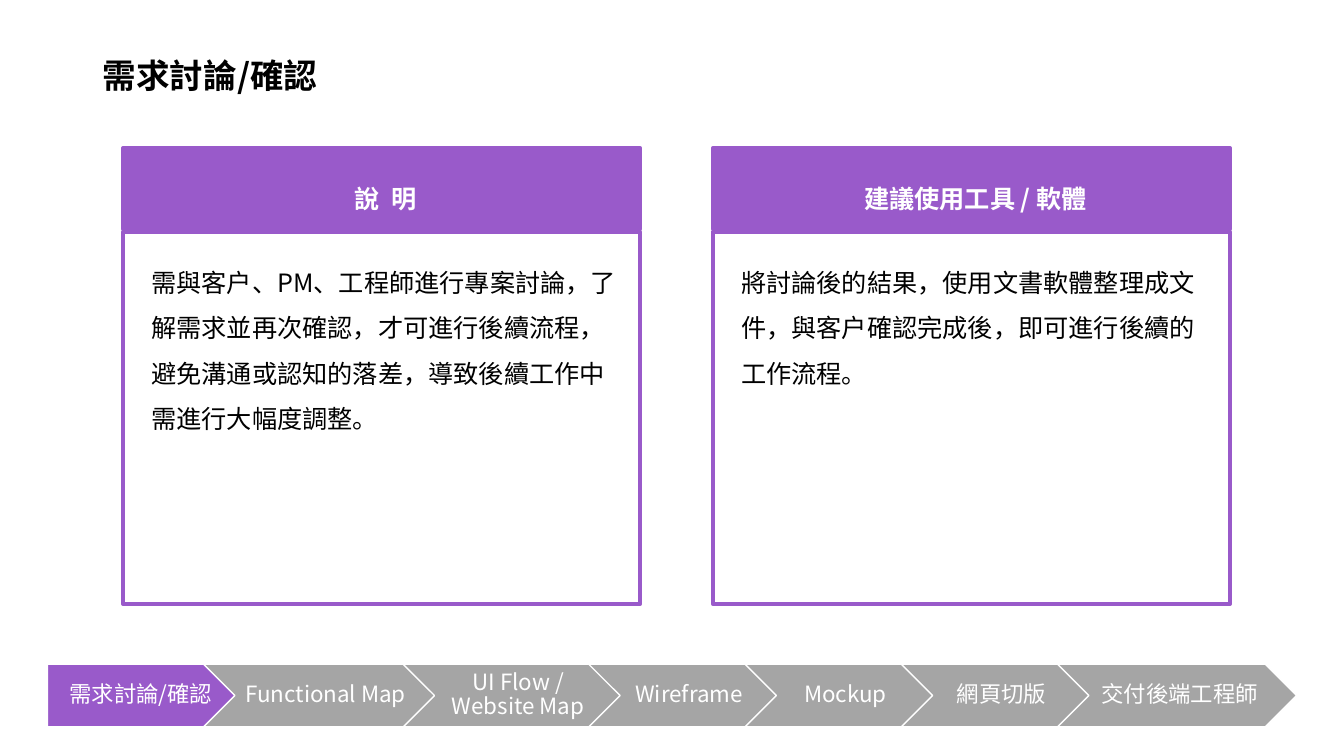
from lxml.etree import SubElement
from pptx import Presentation
from pptx.dml.color import RGBColor
from pptx.enum.shapes import MSO_SHAPE
from pptx.enum.text import MSO_ANCHOR, MSO_AUTO_SIZE, PP_ALIGN
from pptx.oxml.ns import qn
from pptx.util import Inches, Pt

TITLE = "需求討論/確認"
CARDS = [
    ("說  明",
     "需與客戶、PM、工程師進行專案討論，了解需求並再次確認，才可進行後續流程，"
     "避免溝通或認知的落差，導致後續工作中需進行大幅度調整。"),
    ("建議使用工具 / 軟體",
     "將討論後的結果，使用文書軟體整理成文件，與客戶確認完成後，"
     "即可進行後續的工作流程。"),
]
STEPS = [
    ("需求討論/確認", 1.94),
    ("Functional Map", 2.37),
    ("UI Flow / Website Map", 2.23),
    ("Wireframe", 1.94),
    ("Mockup", 1.94),
    ("網頁切版", 1.94),
    ("交付後端工程師", 2.37),
]

FONT = "Noto Sans CJK TC"
PURPLE = RGBColor(0x99, 0x5A, 0xCA)
GRAY = RGBColor(0xA5, 0xA5, 0xA5)
WHITE = RGBColor(0xFF, 0xFF, 0xFF)
BLACK = RGBColor(0, 0, 0)

CARD_LEFT, CARD_STEP, CARD_WIDTH = 1.22, 5.85, 5.13
CARD_PAD = (0.28, 0.2, 0.2, 0.2)
STEP_LEFT, STEP_TOP, STEP_HIGH, OVERLAP = 0.47, 6.59, 0.62, 0.39


def write(shape, text, size, color, bold=False, align=PP_ALIGN.LEFT,
          space=0.9, anchor=MSO_ANCHOR.MIDDLE, pad=(0.1, 0.05, 0.1, 0.05)):
    frame = shape.text_frame
    frame.word_wrap = True
    frame.vertical_anchor = anchor
    (frame.margin_left, frame.margin_top,
     frame.margin_right, frame.margin_bottom) = map(Inches, pad)
    para = frame.paragraphs[0]
    para.alignment = align
    para.line_spacing = space
    run = para.add_run()
    run.text = text
    font = run.font
    font.name, font.size, font.bold = FONT, Pt(size), bold
    font.color.rgb = color
    SubElement(run._r.get_or_add_rPr(), qn("a:ea"), typeface=FONT)


def draw(slide, kind, box, fill, line, width):
    shape = slide.shapes.add_shape(kind, *map(Inches, box))
    shape.shadow.inherit = False
    if fill is None:
        shape.fill.background()
    else:
        shape.fill.solid()
        shape.fill.fore_color.rgb = fill
    shape.line.color.rgb = line
    shape.line.width = Pt(width)
    return shape


def add_steps(slide):
    left = STEP_LEFT
    for i, (name, width) in enumerate(STEPS):
        first = i == 0
        kind = MSO_SHAPE.PENTAGON if first else MSO_SHAPE.CHEVRON
        shape = draw(slide, kind, (left, STEP_TOP, width, STEP_HIGH),
                     PURPLE if first else GRAY, WHITE, 1)
        write(shape, name, 16, WHITE, align=PP_ALIGN.CENTER,
              pad=(0.09 if first else 0.07, 0.05, 0.02, 0.05))
        left += width - OVERLAP


def add_cards(slide):
    for i, (head, body) in enumerate(CARDS):
        left = CARD_LEFT + i * CARD_STEP
        panel = draw(slide, MSO_SHAPE.RECTANGLE,
                     (left, 2.3, CARD_WIDTH, 3.69), None, PURPLE, 3)
        write(panel, body, 18, BLACK, space=1.5,
              anchor=MSO_ANCHOR.TOP, pad=CARD_PAD)
        band = draw(slide, MSO_SHAPE.RECTANGLE,
                    (left, 1.47, CARD_WIDTH, 0.8), PURPLE, PURPLE, 3)
        write(band, head, 18, WHITE, True, PP_ALIGN.CENTER, 1.5,
              MSO_ANCHOR.TOP, CARD_PAD)
        band.text_frame.auto_size = MSO_AUTO_SIZE.SHAPE_TO_FIT_TEXT


def main():
    deck = Presentation()
    deck.slide_width, deck.slide_height = Inches(13.33), Inches(7.5)
    slide = deck.slides.add_slide(deck.slide_layouts[6])
    add_steps(slide)
    title = slide.shapes.add_textbox(*map(Inches, (0.92, 0.4, 11.5, 0.74)))
    write(title, TITLE, 24, BLACK, True)
    add_cards(slide)
    deck.save("out.pptx")


if __name__ == "__main__":
    main()
